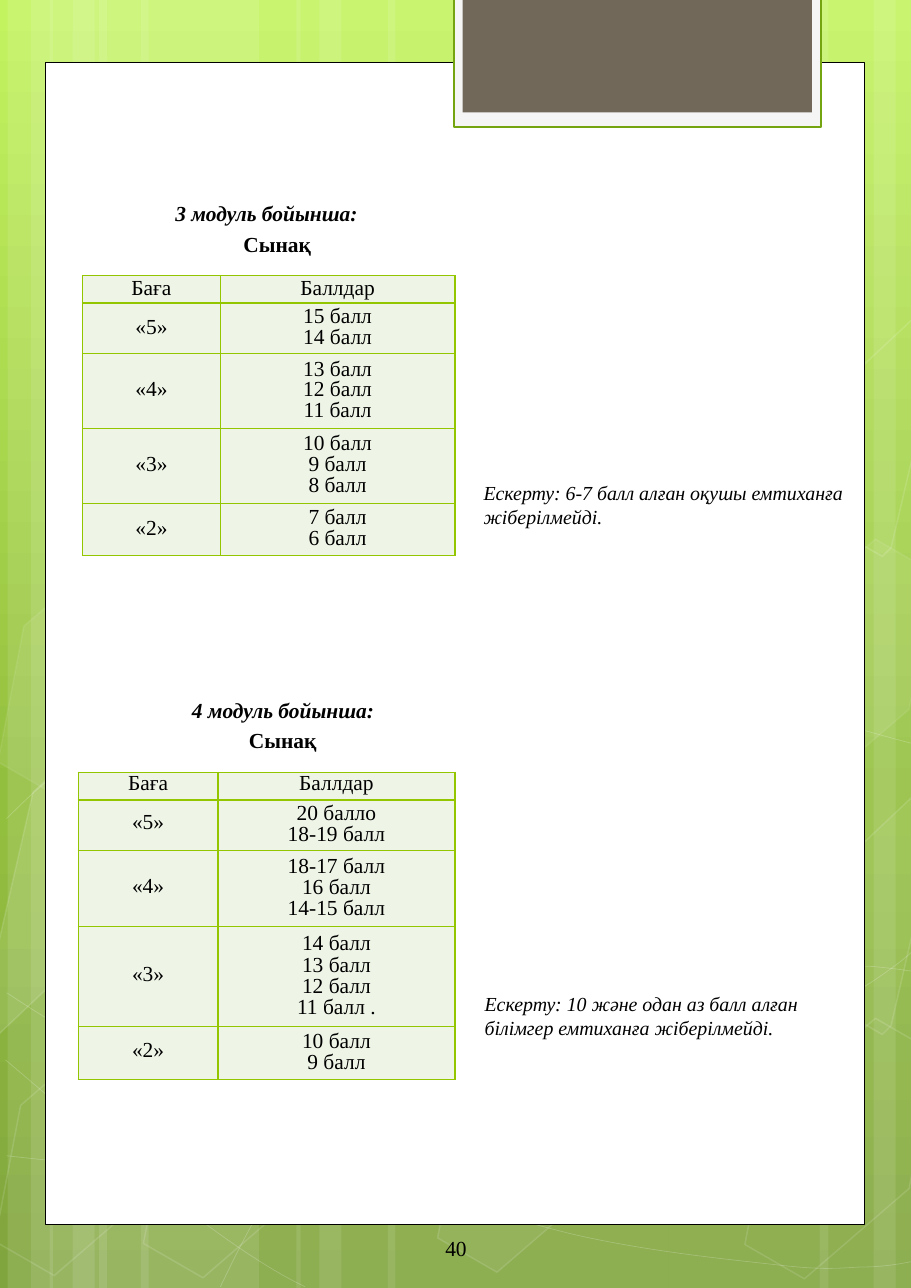
from copy import deepcopy
from lxml.etree import SubElement
from pptx import Presentation
from pptx.dml.color import RGBColor
from pptx.enum.shapes import MSO_SHAPE as SHAPE
from pptx.enum.text import MSO_ANCHOR as ANCHOR, PP_ALIGN as ALIGN
from pptx.oxml.ns import qn
from pptx.util import Inches, Pt

W, H = 8.27, 11.69
FONT = "Times New Roman"
rgb = RGBColor.from_string

prs = Presentation()
prs.slide_width, prs.slide_height = Inches(W), Inches(H)
s = prs.slides.add_slide(prs.slide_layouts[6])


def style(sp, fill=None, line=None, width=1, fill_alpha=100, line_alpha=100):
    sp.shadow.inherit = False
    sp.line.width = Pt(width)
    for target, color, alpha, where in (
            (sp.fill, fill, fill_alpha, "a:solidFill"),
            (sp.line.fill, line, line_alpha, "a:ln/a:solidFill")):
        if color is None:
            target.background()
            continue
        target.solid()
        target.fore_color.rgb = rgb(color)
        if alpha < 100:
            steps = [qn(step) for step in (where + "/a:srgbClr").split("/")]
            clr = sp.element.spPr.find("/".join(steps))
            SubElement(clr, qn("a:alpha"), val=str(alpha * 1000))


def write(tf, text, align=ALIGN.CENTER, spacing=None, **font):
    tf.text = text
    for p in tf.paragraphs:
        p.alignment = align
        if spacing:
            p.line_spacing = Pt(spacing)
        for r in p.runs:
            r.font.color.rgb = rgb("000000")
            for key, value in {"name": FONT, "size": Pt(14), **font}.items():
                setattr(r.font, key, value)


# Background gradient, light at the top
bg = s.background.fill
bg.gradient()
bg.gradient_angle = 270
stop_list = next(s.element.iter(qn("a:gsLst")))
stop_list.append(deepcopy(stop_list[-1]))
for stop, (pos, color) in zip(bg.gradient_stops,
                              ((0, "C3F35F"), (0.62, "93BF3F"), (1, "81A53E"))):
    stop.position = pos
    stop.color.rgb = rgb(color)

# Full-height translucent bars: left, width
bars = [(0.9, 1.45), (0.07, 0.41), (0.28, 0.69), (1.28, 1.45), (0.45, 0.41),
        (0.66, 0.69), (6.07, 1.45), (7.93, 0.41), (7.44, 0.69), (3.52, 2.55),
        (2.69, 0.41), (2.9, 0.69)]
for left, width in bars:
    sp = s.shapes.add_shape(SHAPE.RECTANGLE, Inches(left), 0, Inches(width), Inches(H))
    style(sp, "FFFFFF", fill_alpha=10)

# Fine curves: start point, then control, control and end points
curves = [
    [(0.06, 10.49), (0.51, 10.54), (0.95, 10.59), (1.57, 10.57), (2.19, 10.55),
     (2.96, 10.53), (3.79, 10.37), (4.61, 10.21), (5.79, 9.92), (6.55, 9.62),
     (7.3, 9.32), (8.08, 8.85), (8.33, 8.59)],
    [(0.06, 7.43), (0.3, 7.19), (0.54, 6.96), (1, 6.72), (1.47, 6.49),
     (2.14, 6.15), (2.87, 6.03), (3.61, 5.92), (4.5, 5.91), (5.41, 6.03),
     (6.32, 6.16), (7.83, 6.64), (8.33, 6.76)],
    [(0.05, 9.62), (1.05, 10.47), (2.04, 11.33), (2.77, 11.68)],
    [(0.06, 9.01), (0.32, 9.18), (0.58, 9.35), (1.06, 9.6), (1.54, 9.84),
     (2.26, 10.22), (2.95, 10.49), (3.64, 10.76), (4.51, 11.03), (5.19, 11.2),
     (5.88, 11.36), (6.61, 11.43), (7.05, 11.48), (7.49, 11.53), (7.6, 11.51),
     (7.81, 11.5), (8.03, 11.5), (8.18, 11.47), (8.33, 11.44)],
    [(2, 11.68), (2.15, 11.37), (2.3, 11.06), (2.5, 10.77), (2.7, 10.49),
     (2.98, 10.18), (3.21, 9.96), (3.44, 9.75), (3.58, 9.66), (3.88, 9.5),
     (4.19, 9.34), (4.74, 9.12), (5.03, 9.01), (5.32, 8.91), (5.37, 8.91),
     (5.62, 8.87), (5.88, 8.83), (6.28, 8.79), (6.57, 8.77), (6.85, 8.75),
     (7.33, 8.77), (7.33, 8.77), (7.5, 8.77), (7.7, 8.77), (7.88, 8.77),
     (8.03, 8.78), (8.17, 8.8), (8.24, 8.81), (8.32, 8.82), (8.29, 8.82),
     (8.32, 8.83)],
]
for curve in curves:
    start, *rest = [tuple(map(Inches, point)) for point in curve]
    builder = s.shapes.build_freeform(*start)
    builder.add_line_segments(rest, close=False)
    sp = builder.convert_to_shape()
    # Join each three line segments into one Bézier segment
    segments = list(sp.element.iter(qn("a:lnTo")))
    outline = segments[0].getparent()
    for i in range(0, len(segments), 3):
        bezier = SubElement(outline, qn("a:cubicBezTo"))
        for segment in segments[i:i + 3]:
            bezier.append(segment[0])
            outline.remove(segment)
    style(sp, None, "FFFFFF", 0.5, line_alpha=20)

# Tilted hexagons: left, top, fill alpha, line alpha
hexagons = [(2.76, 0.56, 4, 8), (4.11, 9.18, 6, 12), (0.09, 9.21, 0, 12),
            (0.12, 4.86, 7, 8), (0.77, 7.04, 0, 12), (1.44, 9.23, 0, 12),
            (0.79, 2.67, 0, 12), (6.23, 7.07, 10, 12), (6.9, 9.24, 0, 12),
            (6.9, 4.89, 7, 8)]
for left, top, fill_alpha, line_alpha in hexagons:
    sp = s.shapes.add_shape(SHAPE.HEXAGON, Inches(left), Inches(top), Inches(1.45), Inches(2.37))
    sp.adjustments[0], sp.adjustments[1] = 0.285, 1.155
    sp.rotation = 30
    style(sp, "FFFFFF" if fill_alpha else None, "FFFFFF", 1, fill_alpha, line_alpha)

# Hexagons cut off by the slide edge: fill alpha, corners
cut_hexagons = [
    (10, [(0.3, 7.19), (0.44, 7.06), (1.07, 7.43), (0.79, 8.63), (-0.11, 9.48), (-0.21, 9.42)]),
    (4, [(7.66, 7.82), (8.56, 6.97), (8.62, 7.01), (8.09, 9.31), (8.01, 9.39), (7.38, 9.02)]),
    (0, [(7.66, 3.48), (8.56, 2.64), (8.63, 2.67), (8.09, 4.97), (8.01, 5.05), (7.38, 4.69)]),
]
for fill_alpha, corners in cut_hexagons:
    start, *rest = [tuple(map(Inches, corner)) for corner in corners]
    builder = s.shapes.build_freeform(*start)
    builder.add_line_segments(rest, close=True)
    style(builder.convert_to_shape(), "FFFFFF" if fill_alpha else None, "FFFFFF", 1, fill_alpha, 12)

# White page panel and the tab at its top
for box, fill, line, width in (
        ((0.41, 0.57, 7.44, 10.54), "FFFFFF", "000000", 0.5),
        ((4.12, -0.04, 3.33, 1.19), "F5F5F5", "74A510", 1.25),
        ((4.2, -0.04, 3.17, 1.06), "71685A", None, 1)):
    style(s.shapes.add_shape(SHAPE.RECTANGLE, *map(Inches, box)), fill, line, width)

# Grade tables: position, columns, rows, spacing of single and stacked lines, cells
tables = [
    ((0.75, 2.5), (1.25, 2.13), (0.25, 0.46, 0.68, 0.68, 0.47), (13.7, 13.7),
     [("Баға", "Баллдар"), ("«5»", "15 балл\n14 балл"),
      ("«4»", "13 балл\n12 балл\n11 балл"), ("«3»", "10 балл\n9 балл\n8 балл"),
      ("«2»", "7 балл\n6 балл")]),
    ((0.71, 7.01), (1.27, 2.15), (0.25, 0.46, 0.69, 0.91, 0.48), (12, 13.9),
     [("Баға", "Баллдар"), ("«5»", "20 балло\n18-19 балл"),
      ("«4»", "18-17 балл\n16 балл\n14-15 балл"),
      ("«3»", "14 балл\n13 балл\n12 балл\n11 балл ."), ("«2»", "10 балл\n9 балл")]),
]
for (left, top), cols, rows, spacings, grades in tables:
    frame = s.shapes.add_table(len(rows), len(cols), Inches(left), Inches(top),
                               Inches(sum(cols)), Inches(sum(rows)))
    table = frame.table
    table.first_row = table.horz_banding = False
    for col, width in zip(table.columns, cols):
        col.width = Inches(width)
    for row, height, texts in zip(table.rows, rows, grades):
        row.height = Inches(height)
        for cell, text in zip(row.cells, texts):
            cell.margin_left = cell.margin_right = Inches(0.01)
            cell.margin_top = cell.margin_bottom = 0
            cell.vertical_anchor = ANCHOR.MIDDLE
            write(cell.text_frame, text, spacing=spacings["\n" in text])
            tcPr = cell._tc.get_or_add_tcPr()
            for side in ("a:lnL", "a:lnR", "a:lnT", "a:lnB"):
                ln = SubElement(tcPr, qn(side), w=str(Pt(1)))
                SubElement(SubElement(ln, qn("a:solidFill")), qn("a:srgbClr"), val="94C600")
            cell.fill.solid()
            cell.fill.fore_color.rgb = rgb("EEF5E7")

# Headings, notes and page number
heading = {"bold": True, "italic": True}
exam = {"bold": True, "align": ALIGN.LEFT}
note = {"italic": True, "size": Pt(13), "align": ALIGN.LEFT}
texts = [
    ((1.45, 1.76, 1.94, 0.35), "3 модуль бойынша:", heading, False),
    ((2.1, 2.04, 0.87, 0.35), "Сынақ", exam, False),
    ((4.28, 4.3, 3.7, 0.55), "Ескерту: 6-7 балл алған оқушы емтиханға жіберілмейді.", note, True),
    ((1.6, 6.27, 1.94, 0.35), "4 модуль бойынша:", heading, False),
    ((2.15, 6.54, 0.87, 0.35), "Сынақ", exam, False),
    ((4.29, 8.94, 3.7, 0.55),
     "Ескерту: 10 және одан аз балл алған білімгер емтиханға жіберілмейді.", note, True),
    ((3.66, 11.15, 0.96, 0.35), "40", {}, True),
]
for box, text, options, wrap in texts:
    tf = s.shapes.add_textbox(*map(Inches, box)).text_frame
    tf.word_wrap = wrap
    tf.margin_left = tf.margin_right = Inches(0.11)
    tf.margin_top = tf.margin_bottom = Inches(0.06)
    write(tf, text, **options)

prs.save("out.pptx")
